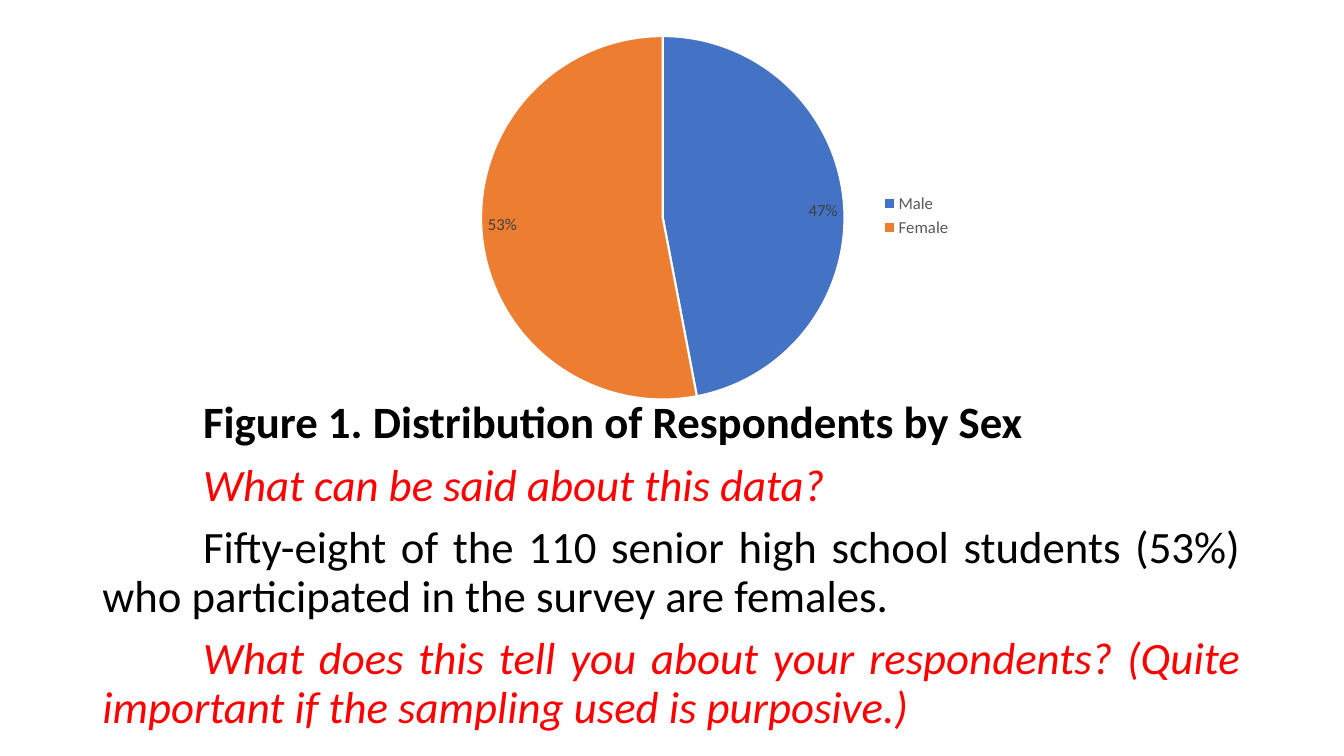
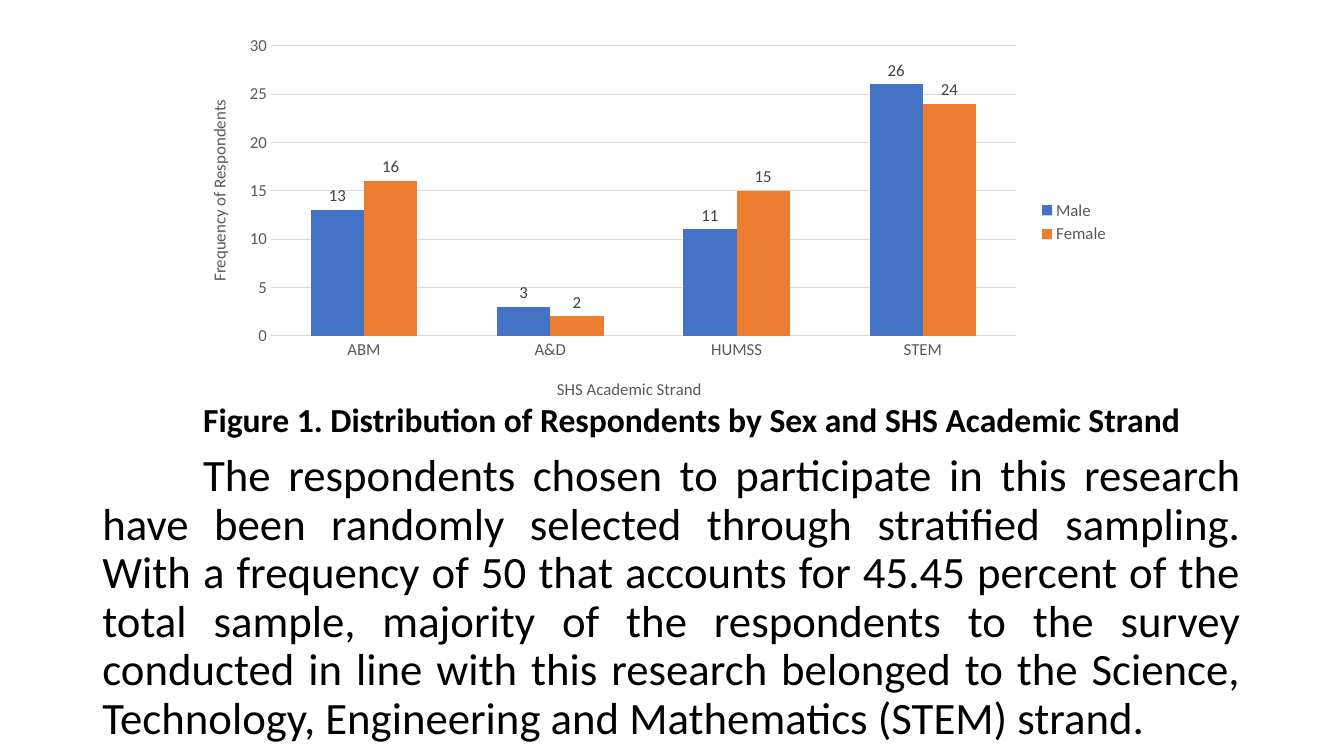
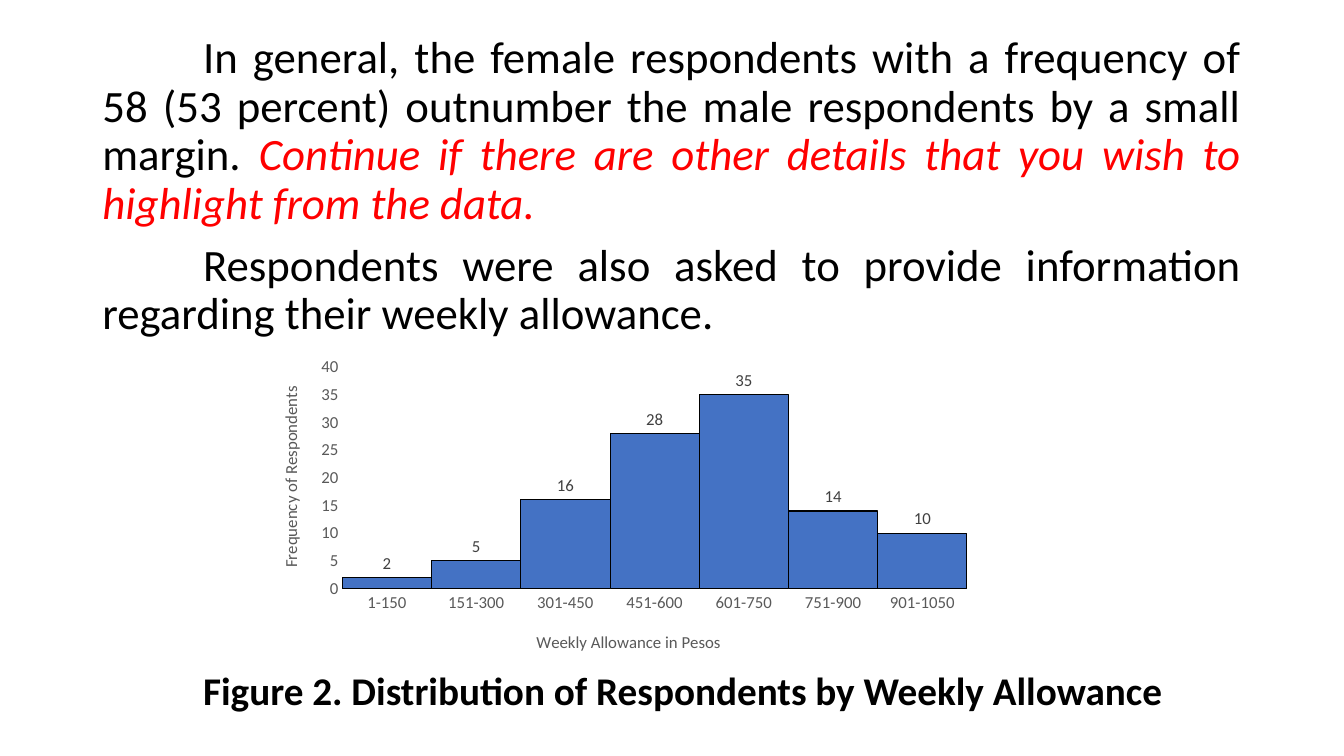
from lxml import etree
from pptx import Presentation
from pptx.chart.data import CategoryChartData
from pptx.dml.color import RGBColor
from pptx.enum.chart import XL_CHART_TYPE, XL_LABEL_POSITION, XL_LEGEND_POSITION, XL_TICK_MARK
from pptx.enum.text import PP_ALIGN
from pptx.oxml.ns import qn
from pptx.util import Cm, Pt

PIE, COLUMN = XL_CHART_TYPE.PIE, XL_CHART_TYPE.COLUMN_CLUSTERED
INSIDE_END, OUTSIDE_END = XL_LABEL_POSITION.INSIDE_END, XL_LABEL_POSITION.OUTSIDE_END
LEGEND_RIGHT = XL_LEGEND_POSITION.RIGHT
TICK_NONE = XL_TICK_MARK.NONE
JUSTIFY = PP_ALIGN.JUSTIFY

# Shared style
FONT = "Calibri"
BLACK, RED, WHITE = "000000", "FF0000", "FFFFFF"
GREY, DARK_GREY, LIGHT_GREY = "595959", "404040", "D9D9D9"
PALETTE = ["4472C4", "ED7D31"]
TEXT_LEFT, TEXT_WIDTH, INDENT = 2.33, 29.21, 2.54
CHART_SIZE = 12

# Run styles: colour, bold, italic
BODY, CAPTION, PROMPT = (BLACK, False, False), (BLACK, True, False), (RED, False, True)

# Content: each text is (top, height, paragraphs) in cm; a paragraph is (size, runs)
SLIDES = [
    {
        "texts": [(9.96, 8.64, [
            (32, [("Figure 1. Distribution of Respondents by Sex", CAPTION)]),
            (32, [("What can be said about this data?", PROMPT)]),
            (32, [("Fifty-eight of the 110 senior high school students (53%) who "
                   "participated in the survey are females.", BODY)]),
            (32, [("What does this tell you about your respondents? (Quite important "
                   "if the sampling used is purposive.)", PROMPT)]),
        ])],
        "chart": {
            "kind": PIE, "box": (11.35, 0.46, 12.9, 9.96),
            "plot": (0.06, 0.04, 0.71, 0.93), "legend": True,
            "categories": ["Male", "Female"],
            "series": {"Series 1": [47, 53]},
        },
    },
    {
        "texts": [(10.03, 9.02, [
            (24, [("Figure 1. Distribution of Respondents by Sex and SHS Academic Strand",
                   CAPTION)]),
            (32, [("The respondents chosen to participate in this research have been "
                   "randomly selected through stratified sampling. With a frequency of 50 "
                   "that accounts for 45.45 percent of the total sample, majority of the "
                   "respondents to the survey conducted in line with this research belonged "
                   "to the Science, Technology, Engineering and Mathematics (STEM) strand.",
                   BODY)]),
        ])],
        "chart": {
            "kind": COLUMN, "box": (4.45, 0.66, 23.77, 9.88),
            "plot": (0.1, 0.05, 0.79, 0.74), "legend": True,
            "categories": ["ABM", "A&D", "HUMSS", "STEM"],
            "series": {"Male": [13, 3, 11, 26], "Female": [16, 2, 15, 24]},
            "gap": 150, "maximum": 30, "grid": True, "outline": False,
            "category_title": ("SHS Academic Strand", (0.4, 0.89)),
            "value_title": ("Frequency of Respondents", (0.03, 0.18)),
        },
    },
    {
        "texts": [
            (0.76, 7.6, [
                (32, [("In general, the female respondents with a frequency of 58 (53 percent) "
                       "outnumber the male respondents by a small margin. ", BODY),
                      ("Continue if there are other details that you wish to highlight "
                       "from the data.", PROMPT)]),
                (32, [("Respondents were also asked to provide information regarding their "
                       "weekly allowance.", BODY)]),
            ]),
            (16.8, 1.4, [
                (28, [("Figure 2. Distribution of Respondents by Weekly Allowance", CAPTION)]),
            ]),
        ],
        "chart": {
            "kind": COLUMN, "box": (6.22, 8.84, 18.52, 8.1),
            "plot": (0.13, 0.05, 0.85, 0.69), "legend": False,
            "categories": ["1-150", "151-300", "301-450", "451-600", "601-750",
                           "751-900", "901-1050"],
            "series": {"Series 1": [2, 5, 16, 28, 35, 14, 10]},
            "gap": 0, "maximum": 40, "grid": False, "outline": True,
            "category_title": ("Weekly Allowance in Pesos", (0.39, 0.86)),
            "value_title": ("Frequency of Respondents", (0.04, 0.1)),
        },
    },
]


def color(hex_string):
    return RGBColor.from_string(hex_string)


def style_font(font, size, hex_string):
    font.name, font.size, font.bold = FONT, Pt(size), False
    font.color.rgb = color(hex_string)


def style_line(line, hex_string, width=0.75):
    line.color.rgb = color(hex_string)
    line.width = Pt(width)


def place(element, position, index, target=None):
    """Fix a chart part at fractions (x, y[, w, h]) of the chart area."""
    old = element.find(qn("c:layout"))
    if old is not None:
        element.remove(old)
    layout = etree.Element(qn("c:layout"))
    manual = etree.SubElement(layout, qn("c:manualLayout"))
    settings = [("layoutTarget", target)] if target else []
    settings += [("xMode", "edge"), ("yMode", "edge")]
    settings += zip("xywh", position)
    for name, value in settings:
        etree.SubElement(manual, qn(f"c:{name}")).set("val", str(value))
    element.insert(index, layout)


def add_text(slide, top, height, paragraphs):
    box = slide.shapes.add_textbox(Cm(TEXT_LEFT), Cm(top), Cm(TEXT_WIDTH), Cm(height))
    frame = box.text_frame
    frame.word_wrap = True
    for number, (size, runs) in enumerate(paragraphs):
        paragraph = frame.add_paragraph() if number else frame.paragraphs[0]
        paragraph.alignment = JUSTIFY
        paragraph.line_spacing = 0.9
        paragraph.space_before = Pt(10 if number else 0)
        paragraph._p.get_or_add_pPr().set("indent", str(Cm(INDENT)))
        paragraph.font.name, paragraph.font.size = FONT, Pt(size)
        for text, (hex_string, bold, italic) in runs:
            run = paragraph.add_run()
            run.text = text
            run.font.bold, run.font.italic = bold, italic
            run.font.color.rgb = color(hex_string)


def add_axis_title(axis, text, position, rotation):
    title = axis.axis_title
    title.text_frame.text = text
    style_font(title.text_frame.paragraphs[0].font, CHART_SIZE, GREY)
    title.text_frame._txBody.bodyPr.set("rot", str(rotation))
    place(title._element, position, 1)


def style_pie(plot):
    for number, hex_string in enumerate(PALETTE):
        point = plot.series[0].points[number]
        point.format.fill.solid()
        point.format.fill.fore_color.rgb = color(hex_string)
        style_line(point.format.line, WHITE, 1.5)
    labels = plot.data_labels
    labels.show_percentage, labels.show_value = True, False
    labels.number_format, labels.number_format_is_linked = "0%", False
    labels.position = INSIDE_END


def style_columns(chart, plot, settings):
    plot.vary_by_categories = False
    plot.gap_width, plot.overlap = settings["gap"], 0
    plot.data_labels.show_value = True
    plot.data_labels.position = OUTSIDE_END
    for series, hex_string in zip(plot.series, PALETTE):
        series.format.fill.solid()
        series.format.fill.fore_color.rgb = color(hex_string)
        if settings["outline"]:
            style_line(series.format.line, BLACK)

    # Axes
    category_axis, value_axis = chart.category_axis, chart.value_axis
    for axis in (category_axis, value_axis):
        style_font(axis.tick_labels.font, CHART_SIZE, GREY)
        axis.major_tick_mark = axis.minor_tick_mark = TICK_NONE
    style_line(category_axis.format.line, LIGHT_GREY)
    value_axis.format.line.fill.background()
    value_axis.minimum_scale, value_axis.maximum_scale = 0, settings["maximum"]
    value_axis.major_unit = 5
    value_axis.has_major_gridlines = settings["grid"]
    if settings["grid"]:
        style_line(value_axis.major_gridlines.format.line, LIGHT_GREY)
    add_axis_title(category_axis, *settings["category_title"], 0)
    add_axis_title(value_axis, *settings["value_title"], -5400000)


def add_chart(slide, settings):
    data = CategoryChartData()
    data.categories = settings["categories"]
    for name, values in settings["series"].items():
        data.add_series(name, values)
    box = [Cm(length) for length in settings["box"]]
    chart = slide.shapes.add_chart(settings["kind"], *box, data).chart
    style_font(chart.font, 10, BLACK)
    chart.has_title = False
    chart.has_legend = settings["legend"]
    if settings["legend"]:
        chart.legend.position = LEGEND_RIGHT
        chart.legend.include_in_layout = False
        style_font(chart.legend.font, CHART_SIZE, GREY)

    plot = chart.plots[0]
    plot.has_data_labels = True
    style_font(plot.data_labels.font, CHART_SIZE, DARK_GREY)
    if settings["kind"] == PIE:
        style_pie(plot)
    else:
        style_columns(chart, plot, settings)
    plot_area = chart._chartSpace.chart.plotArea
    place(plot_area, settings["plot"], 0, "inner")


def main():
    presentation = Presentation()
    presentation.slide_width, presentation.slide_height = Cm(33.87), Cm(19.05)
    blank = presentation.slide_layouts[6]
    for content in SLIDES:
        slide = presentation.slides.add_slide(blank)
        for text in content["texts"]:
            add_text(slide, *text)
        add_chart(slide, content["chart"])
    presentation.save("out.pptx")


if __name__ == "__main__":
    main()
